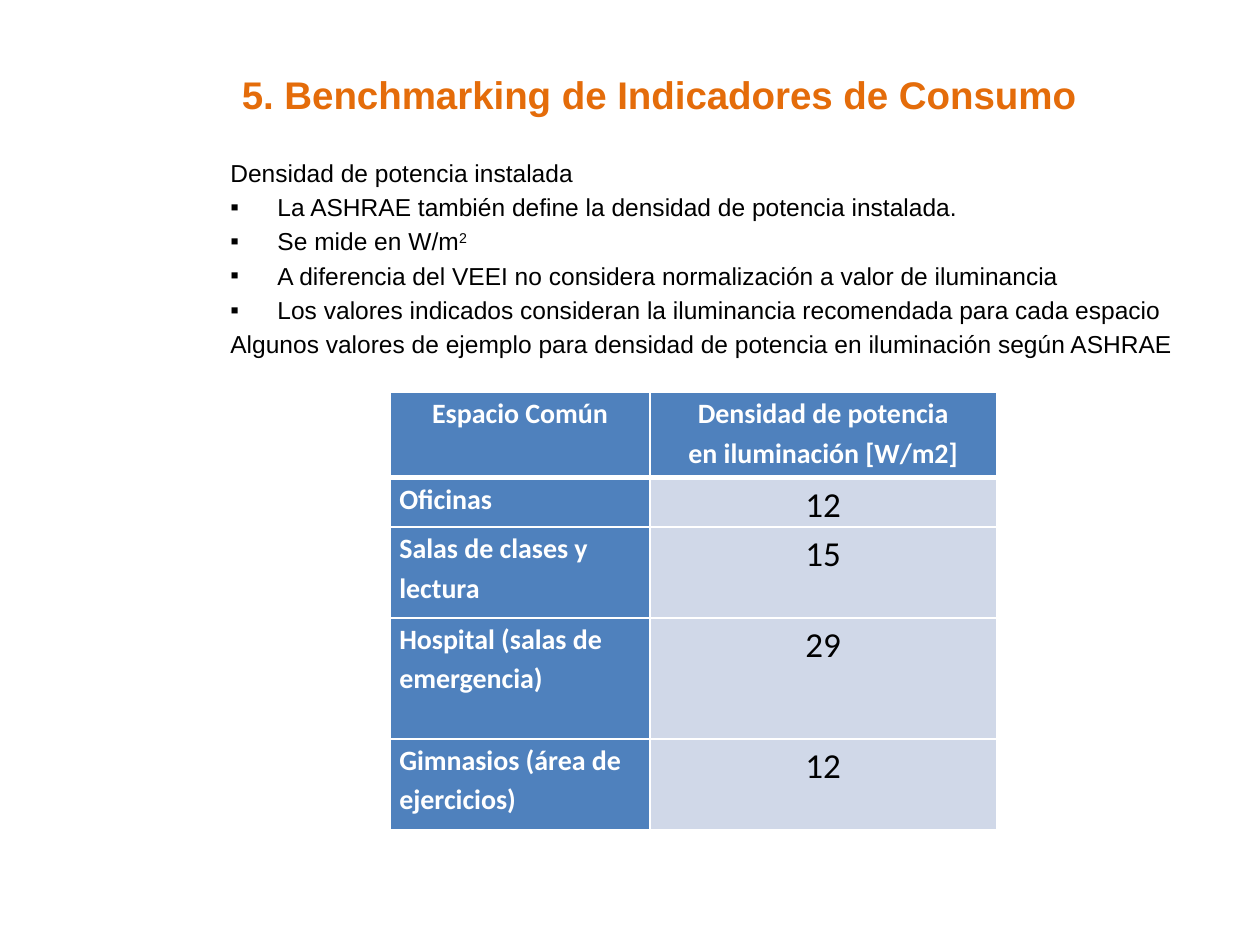
from pptx import Presentation
from pptx.dml.color import RGBColor
from pptx.enum.text import MSO_AUTO_SIZE, PP_ALIGN
from pptx.oxml.ns import qn
from pptx.util import Cm, Pt
from lxml.etree import SubElement

ORANGE = RGBColor(0xE4, 0x6C, 0x0A)
BLACK = RGBColor(0, 0, 0)
WHITE = RGBColor(0xFF, 0xFF, 0xFF)
BLUE = RGBColor(0x4F, 0x81, 0xBD)
PALE_BLUE = RGBColor(0xD0, 0xD8, 0xE8)

TITLE = "5. Benchmarking de Indicadores de Consumo"
BODY = [
    ("Densidad de potencia instalada", "", False),
    ("La ASHRAE también define la densidad de potencia instalada.", "", True),
    ("Se mide en W/m", "2", True),
    ("A diferencia del VEEI no considera normalización a valor de iluminancia", "", True),
    ("Los valores indicados consideran la iluminancia recomendada para cada espacio", "", True),
    ("Algunos valores de ejemplo para densidad de potencia en iluminación según ASHRAE", "", False),
]
ROWS = [
    ("Espacio Común", "Densidad de potencia\nen iluminación [W/m2]"),
    ("Oficinas", "12"),
    ("Salas de clases y lectura", "15"),
    ("Hospital (salas de emergencia)", "29"),
    ("Gimnasios (área de ejercicios)", "12"),
]
COLUMN_WIDTHS = [5.23, 6.99]
ROW_HEIGHTS = [1.73, 0.81, 1.83, 2.44, 1.83]


def place(shape, left, top, width, height):
    shape.left, shape.top = Cm(left), Cm(top)
    shape.width, shape.height = Cm(width), Cm(height)


def set_font(font, name, size, color, bold=False):
    font.name, font.size, font.bold = name, Pt(size), bold
    font.color.rgb = color


def set_bullet(paragraph, bulleted):
    properties = paragraph._p.get_or_add_pPr()
    indent = Cm(0.95) if bulleted else 0
    properties.set("marL", str(indent))
    properties.set("indent", str(-indent))
    if bulleted:
        SubElement(properties, qn("a:buFont"), typeface="Arial")
        SubElement(properties, qn("a:buChar"), char="▪")
    else:
        SubElement(properties, qn("a:buNone"))


def set_borders(cell, top, bottom):
    properties = cell._tc.get_or_add_tcPr()
    for side, points in (("L", 1), ("R", 1), ("T", top), ("B", bottom)):
        line = SubElement(properties, qn(f"a:ln{side}"), w=str(Pt(points)))
        fill = SubElement(line, qn("a:solidFill"))
        SubElement(fill, qn("a:srgbClr"), val=str(WHITE))


def fill_cell(cell, text, row, column):
    is_value = row > 0 and column > 0
    set_borders(cell, 3 if row == 1 else 1, 3 if row == 0 else 1)
    cell.fill.solid()
    cell.fill.fore_color.rgb = PALE_BLUE if is_value else BLUE
    cell.margin_left = cell.margin_right = Cm(0.18)
    cell.margin_top = cell.margin_bottom = 0
    cell.text = text
    for paragraph in cell.text_frame.paragraphs:
        paragraph.alignment = PP_ALIGN.CENTER if row == 0 or column > 0 else PP_ALIGN.LEFT
        paragraph.line_spacing = 1.15
        if is_value:
            set_font(paragraph.font, "Calibri", 20, BLACK)
        else:
            set_font(paragraph.font, "Calibri", 16, WHITE, True)


presentation = Presentation()
presentation.slide_width, presentation.slide_height = Cm(25.4), Cm(19.05)
slide = presentation.slides.add_slide(presentation.slide_layouts[1])

title = slide.shapes.title
place(title, 4.62, 1.32, 18.26, 1.14)
title.text_frame.text = TITLE
title.text_frame.auto_size = MSO_AUTO_SIZE.NONE
title_paragraph = title.text_frame.paragraphs[0]
title_paragraph.alignment = PP_ALIGN.LEFT
set_font(title_paragraph.font, "Arial", 22, ORANGE, True)

body = slide.placeholders[1]
place(body, 4.39, 3.05, 20.5, 12.57)
frame = body.text_frame
frame.auto_size = MSO_AUTO_SIZE.NONE
for index, (text, superscript, bulleted) in enumerate(BODY):
    paragraph = frame.add_paragraph() if index else frame.paragraphs[0]
    if index == 0:
        paragraph.space_before = Pt(0)
    set_bullet(paragraph, bulleted)
    set_font(paragraph.font, "Arial", 14, BLACK)
    paragraph.add_run().text = text
    if superscript:
        run = paragraph.add_run()
        run.text = superscript
        run._r.get_or_add_rPr().set("baseline", "30000")

table = slide.shapes.add_table(
    len(ROWS), len(COLUMN_WIDTHS), Cm(7.87), Cm(7.9),
    Cm(sum(COLUMN_WIDTHS)), Cm(sum(ROW_HEIGHTS)),
).table
for column, width in zip(table.columns, COLUMN_WIDTHS):
    column.width = Cm(width)
for row_index, (height, texts) in enumerate(zip(ROW_HEIGHTS, ROWS)):
    table.rows[row_index].height = Cm(height)
    for column_index, text in enumerate(texts):
        fill_cell(table.cell(row_index, column_index), text, row_index, column_index)

presentation.save("out.pptx")
